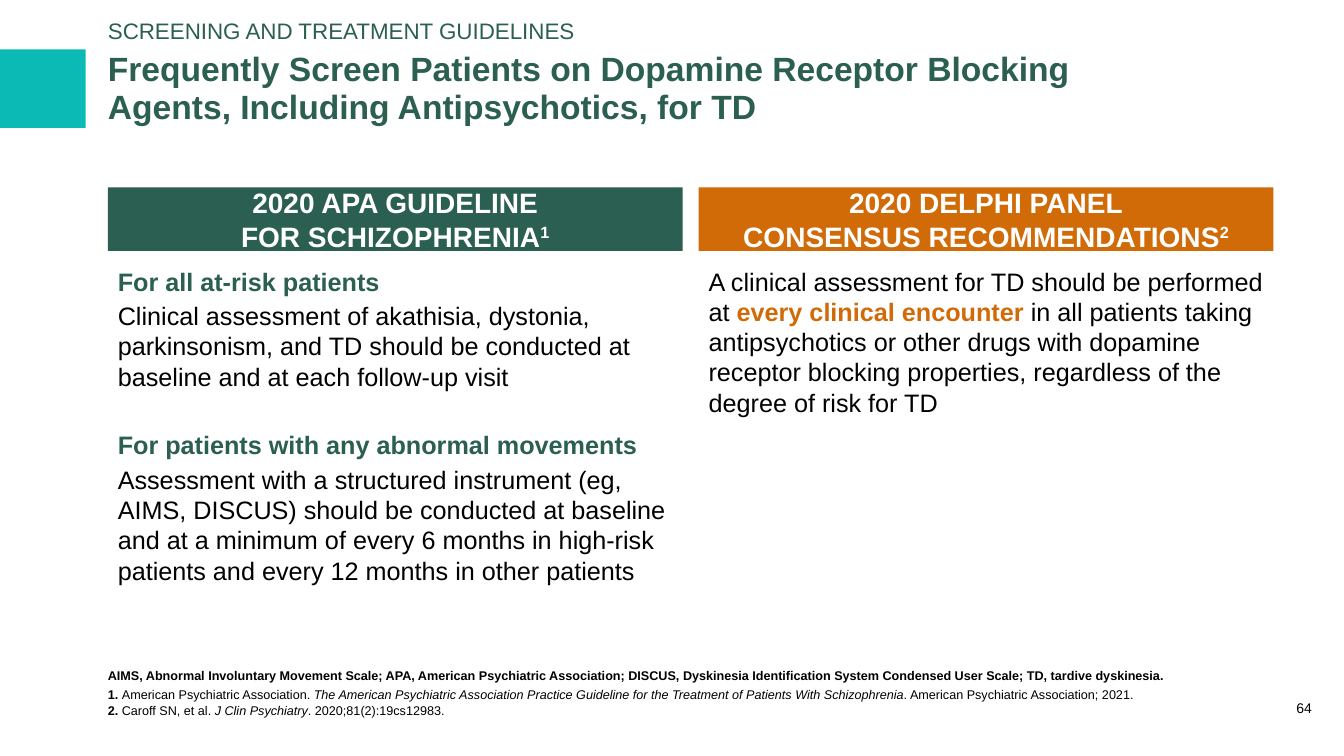
from dataclasses import dataclass

from lxml.etree import SubElement
from pptx import Presentation
from pptx.dml.color import RGBColor
from pptx.enum.shapes import MSO_SHAPE as Preset
from pptx.enum.text import MSO_ANCHOR as Anchor, MSO_AUTO_SIZE as AutoSize, PP_ALIGN as Align
from pptx.oxml.ns import qn
from pptx.util import Inches, Pt

COLORS = {
    "teal": "0BBAB4",
    "green": "2B5F51",
    "orange": "D06B08",
    "black": "000000",
    "white": "FFFFFF",
}
FONT = "Arial"
LEFT = 1.07
COLUMN_WIDTH = 5.7
COLUMN_STEP = 5.86


@dataclass
class Span:
    text: str
    color: str = "black"
    bold: bool = False
    italic: bool = False
    raised: bool = False


@dataclass
class Para:
    spans: list[Span]
    before: float = 0
    after: float = 0


@dataclass
class Column:
    heading: str
    reference: str
    color: str
    paras: list[Para]


def write(box, paras: list[Para], *, size: float, align=Align.LEFT, anchor=Anchor.TOP,
          spacing: float = 1.0, margins: tuple[float, float] = (0, 0)) -> None:
    frame = box.text_frame
    frame.word_wrap = True
    frame.auto_size = AutoSize.NONE
    frame.vertical_anchor = anchor
    frame.margin_left = frame.margin_right = Inches(margins[0])
    frame.margin_top = frame.margin_bottom = Inches(margins[1])
    for index, para in enumerate(paras):
        line = frame.add_paragraph() if index else frame.paragraphs[0]
        properties = line._p.get_or_add_pPr()
        properties.set("marL", "0")
        properties.set("indent", "0")
        SubElement(properties, qn("a:buNone"))
        line.alignment = align
        line.line_spacing = spacing
        line.space_before = Pt(para.before)
        line.space_after = Pt(para.after)
        for span in para.spans:
            for part, text in enumerate(span.text.split("\n")):
                if part:
                    line.add_line_break()
                if not text:
                    continue
                run = line.add_run()
                run.text = text
                font = run.font
                font.name = FONT
                font.size = Pt(size)
                font.bold = span.bold
                font.italic = span.italic
                font.color.rgb = RGBColor.from_string(COLORS[span.color])
                if span.raised:
                    run._r.get_or_add_rPr().set("baseline", "30000")


def place(box, left: float, top: float, width: float, height: float):
    box.left, box.top = Inches(left), Inches(top)
    box.width, box.height = Inches(width), Inches(height)
    return box


def add_text_box(page, left: float, top: float, width: float, height: float):
    return page.shapes.add_textbox(Inches(left), Inches(top), Inches(width), Inches(height))


def add_block(page, left: float, top: float, width: float, height: float, color: str):
    block = page.shapes.add_shape(
        Preset.RECTANGLE, Inches(left), Inches(top), Inches(width), Inches(height))
    block.shadow.inherit = False
    block.fill.solid()
    block.fill.fore_color.rgb = RGBColor.from_string(COLORS[color])
    block.line.fill.background()
    return block


def add_column(page, column: Column, left: float) -> None:
    header = add_block(page, left, 1.86, COLUMN_WIDTH, 0.63, column.color)
    heading = Para([Span(column.heading, "white", bold=True),
                    Span(column.reference, "white", bold=True, raised=True)])
    write(header, [heading], size=20, align=Align.CENTER, anchor=Anchor.MIDDLE,
          margins=(0.1, 0))
    content = add_text_box(page, left, 2.59, COLUMN_WIDTH, 3.9)
    write(content, column.paras, size=18, margins=(0.1, 0.05))


COLUMNS = [
    Column("2020 APA GUIDELINE\nFOR SCHIZOPHRENIA", "1", "green", [
        Para([Span("For all at-risk patients", "green", bold=True)], after=3),
        Para([Span("Clinical assessment of akathisia, dystonia, parkinsonism, and TD should be "
                   "conducted at baseline and at each follow-up visit")], after=3),
        Para([Span("For patients with any abnormal movements", "green", bold=True)],
             before=24.5, after=3),
        Para([Span("Assessment with a structured instrument (eg, AIMS, DISCUS) should be "
                   "conducted at baseline and at a minimum of every 6 months in high-risk "
                   "patients and every 12 months in other patients")], after=3),
    ]),
    Column("2020 DELPHI PANEL\nCONSENSUS RECOMMENDATIONS", "2", "orange", [
        Para([Span("A clinical assessment for TD should be performed at "),
              Span("every clinical encounter ", "orange", bold=True),
              Span("in all patients taking antipsychotics or other drugs with dopamine "
                   "receptor blocking properties, regardless of the degree of risk for TD")],
             after=3),
    ]),
]

FOOTNOTES = [
    Para([Span("AIMS, Abnormal Involuntary Movement Scale; APA, American Psychiatric "
               "Association; DISCUS, Dyskinesia Identification System Condensed User Scale; "
               "TD, tardive dyskinesia.", bold=True)], after=3),
    Para([Span("1. ", bold=True),
          Span("American Psychiatric Association. "),
          Span("The American Psychiatric Association Practice Guideline for the Treatment of "
               "Patients With Schizophrenia", italic=True),
          Span(". American Psychiatric Association; 2021. \n"),
          Span("2. ", bold=True),
          Span("Caroff SN, et al. "),
          Span("J Clin Psychiatry", italic=True),
          Span(". 2020;81(2):19cs12983.")]),
]


def main() -> None:
    deck = Presentation()
    deck.slide_width, deck.slide_height = Inches(13.33), Inches(7.5)
    page = deck.slides.add_slide(deck.slide_layouts[1])

    add_block(page, 0, 0.49, 0.85, 0.78, "teal")
    title = place(page.shapes.title, LEFT, 0.39, 9.86, 0.99)
    write(title, [Para([Span("Frequently Screen Patients on Dopamine Receptor Blocking Agents, "
                             "Including Antipsychotics, for TD", "green", bold=True)])],
          size=24, anchor=Anchor.MIDDLE, spacing=0.95)
    kicker = place(page.placeholders[1], LEFT, 0.18, 10.26, 0.28)
    write(kicker, [Para([Span("SCREENING AND TREATMENT GUIDELINES", "green")])],
          size=16, anchor=Anchor.MIDDLE, spacing=0.95)

    for index, column in enumerate(COLUMNS):
        add_column(page, column, LEFT + index * COLUMN_STEP)

    write(add_text_box(page, LEFT, 6.56, 11.56, 0.56), FOOTNOTES, size=9, anchor=Anchor.BOTTOM)
    write(add_text_box(page, 12.77, 6.68, 0.33, 0.43), [Para([Span("64")])],
          size=10, align=Align.CENTER, anchor=Anchor.BOTTOM, spacing=0.95)
    deck.save("out.pptx")


if __name__ == "__main__":
    main()
